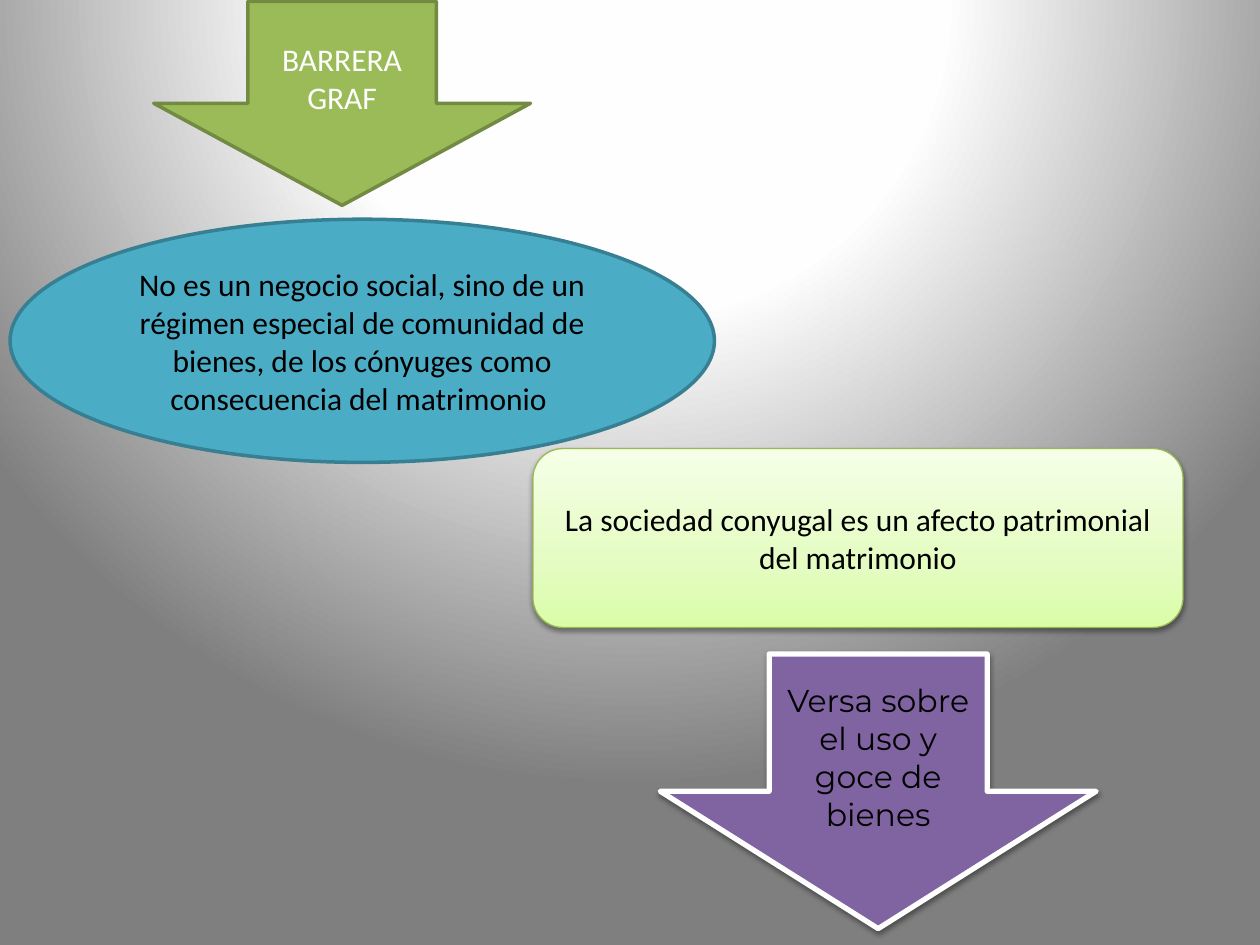
from dataclasses import dataclass

from lxml.etree import SubElement, _Element
from pptx import Presentation
from pptx.dml.color import RGBColor
from pptx.enum.shapes import MSO_SHAPE as Shape
from pptx.enum.text import MSO_ANCHOR, PP_ALIGN
from pptx.oxml import parse_xml
from pptx.oxml.ns import nsdecls, qn
from pptx.util import Inches, Pt

COLORS = {
    "white": "FFFFFF",
    "near_white": "FEFEFE",
    "gray": "7F7F7F",
    "black": "000000",
    "teal": "4BACC6",
    "teal_line": "377F92",
    "green": "9BBB59",
    "green_line": "738A42",
    "card_line": "98B955",
    "lime": "DAFDA7",
    "lime_light": "E4FCC2",
    "lime_pale": "F5FFE7",
    "purple": "8064A2",
}
Stops = tuple[tuple[int, str], ...]
BACKGROUND_STOPS: Stops = ((0, "white"), (40, "near_white"), (100, "gray"))
CARD_STOPS: Stops = ((0, "lime"), (35, "lime_light"), (100, "lime_pale"))
UPWARD = '<a:lin ang="16200000" scaled="0"/>'
RADIAL = ('<a:path path="circle">'
          '<a:fillToRect l="50000" t="-80000" r="50000" b="180000"/></a:path>')


@dataclass
class Block:
    text: str
    shape: Shape
    left: float
    top: float
    width: float
    height: float
    fill: str | Stops
    line: str
    line_width: float
    text_color: str = "black"
    font: str = "Calibri"
    shadow: bool = False


BLOCKS = [
    Block("No es un negocio social, sino de un régimen especial de comunidad de "
          "bienes, de los cónyuges como consecuencia del matrimonio ",
          Shape.OVAL, 0.08, 1.74, 5.59, 1.93, "teal", "teal_line", 2),
    Block("La sociedad conyugal es un afecto patrimonial del matrimonio",
          Shape.ROUNDED_RECTANGLE, 4.23, 3.56, 5.16, 1.42,
          CARD_STOPS, "card_line", 0.75, shadow=True),
    Block("BARRERA GRAF", Shape.DOWN_ARROW, 1.22, 0.01, 2.99, 1.62,
          "green", "green_line", 2, text_color="white"),
    Block("Versa sobre el uso y goce de bienes",
          Shape.DOWN_ARROW, 5.24, 5.19, 3.46, 2.18,
          "purple", "white", 3, font="Montserrat", shadow=True),
]


def rgb(name: str) -> RGBColor:
    return RGBColor.from_string(COLORS[name])


def set_gradient(fill, parent: _Element, stops: Stops, direction: str) -> None:
    """Give the owner of fill, whose properties element is parent, a gradient."""
    fill.solid()
    gs = "".join(f'<a:gs pos="{pos * 1000}"><a:srgbClr val="{COLORS[name]}"/></a:gs>'
                 for pos, name in stops)
    gradient = parse_xml(f'<a:gradFill {nsdecls("a")} rotWithShape="1">'
                         f'<a:gsLst>{gs}</a:gsLst>{direction}</a:gradFill>')
    parent.replace(parent.find(qn("a:solidFill")), gradient)


def add_shadow(sp) -> None:
    effects = sp._element.spPr.find(qn("a:effectLst"))
    shadow = SubElement(effects, qn("a:outerShdw"), blurRad=str(Pt(3.1)),
                        dist=str(Pt(1.6)), dir="5400000", rotWithShape="0")
    color = SubElement(shadow, qn("a:srgbClr"), val=COLORS["black"])
    SubElement(color, qn("a:alpha"), val="38000")


def add_block(slide, block: Block) -> None:
    sp = slide.shapes.add_shape(block.shape, Inches(block.left), Inches(block.top),
                                Inches(block.width), Inches(block.height))
    if isinstance(block.fill, str):
        sp.fill.solid()
        sp.fill.fore_color.rgb = rgb(block.fill)
    else:
        set_gradient(sp.fill, sp._element.spPr, block.fill, UPWARD)
    sp.line.color.rgb = rgb(block.line)
    sp.line.width = Pt(block.line_width)
    sp.shadow.inherit = False
    if block.shadow:
        add_shadow(sp)

    tf = sp.text_frame
    tf.word_wrap = True
    tf.vertical_anchor = MSO_ANCHOR.MIDDLE
    p = tf.paragraphs[0]
    p.alignment = PP_ALIGN.CENTER
    r = p.add_run()
    r.text = block.text
    r.font.size = Pt(18)
    r.font.name = block.font
    r.font.color.rgb = rgb(block.text_color)


def main() -> None:
    prs = Presentation()
    prs.slide_width, prs.slide_height = Inches(10), Inches(7.5)
    slide = prs.slides.add_slide(prs.slide_layouts[6])
    fill = slide.background.fill
    fill.solid()
    bg_pr = slide._element.cSld.find(qn("p:bg")).find(qn("p:bgPr"))
    set_gradient(fill, bg_pr, BACKGROUND_STOPS, RADIAL)
    for block in BLOCKS:
        add_block(slide, block)
    prs.save("out.pptx")


if __name__ == "__main__":
    main()
